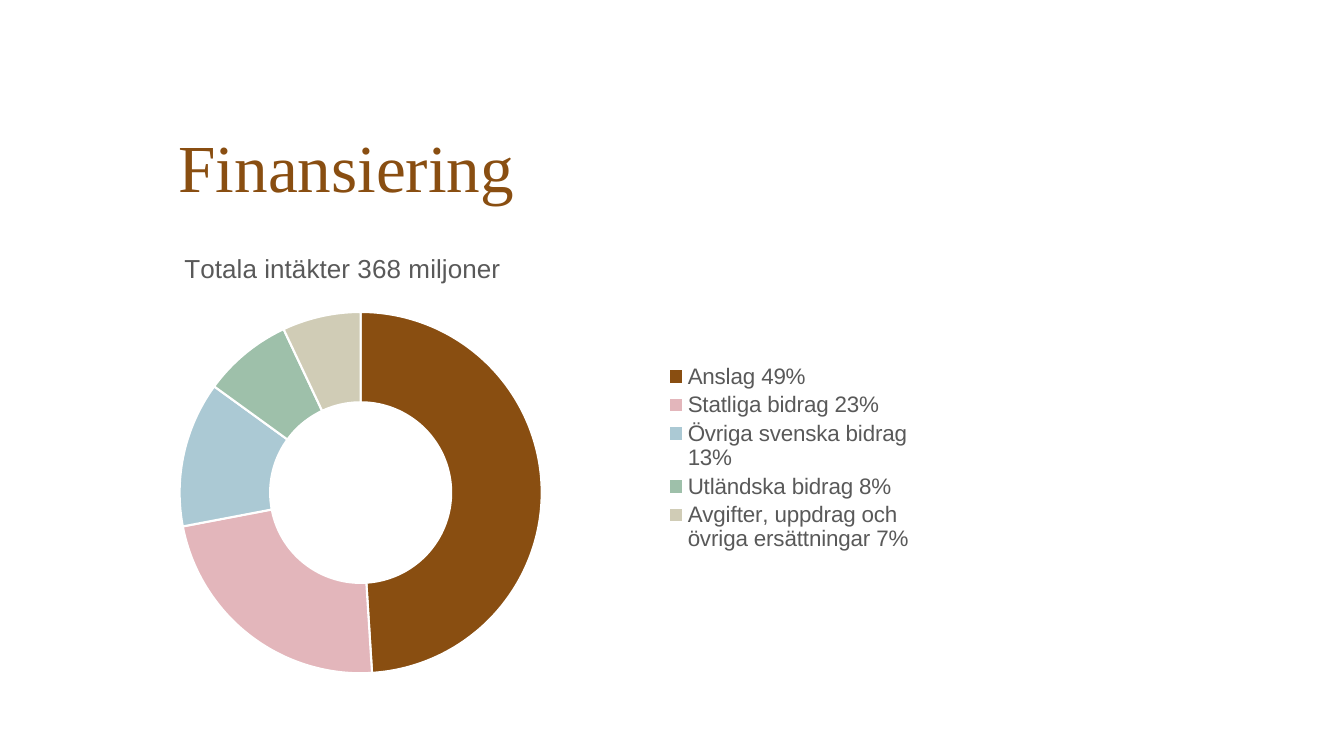
from dataclasses import dataclass

from lxml import etree
from pptx import Presentation
from pptx import util as u
from pptx.chart.data import CategoryChartData
from pptx.dml.color import RGBColor
from pptx.enum import chart as charts, text
from pptx.oxml import ns

SLIDE_WIDTH, SLIDE_HEIGHT = u.Inches(13.33), u.Inches(7.5)
COLORS = {
    "brown": "894E11",
    "pink": "E3B6BB",
    "blue": "ABC9D4",
    "green": "9EC0AA",
    "sand": "D0CCB6",
    "grey": "595959",
    "white": "FFFFFF",
}


@dataclass(frozen=True)
class Income:
    label: str
    percent: int
    color: str


@dataclass(frozen=True)
class Area:
    x: float
    y: float
    w: float = 0
    h: float = 0

    def on_slide(self) -> tuple[int, int, int, int]:
        return (
            int(self.x * SLIDE_WIDTH),
            int(self.y * SLIDE_HEIGHT),
            int(self.w * SLIDE_WIDTH),
            int(self.h * SLIDE_HEIGHT),
        )


INCOMES = [
    Income("Anslag 49%", 49, "brown"),
    Income("Statliga bidrag 23%", 23, "pink"),
    Income("Övriga svenska bidrag 13%", 13, "blue"),
    Income("Utländska bidrag 8%", 8, "green"),
    Income("Avgifter, uppdrag och \növriga ersättningar 7%", 7, "sand"),
]
HEADING = Area(1.77 / 13.33, 0.39 / 7.5, 9.65 / 13.33, 1.97 / 7.5)
FUNDING = Area(0.38 / 13.33, 2.36 / 7.5, 8.76 / 13.33, 4.33 / 7.5)
RING = Area(0.16, 0.17, 0.41, 0.83)
CAPTION = Area(0.16, 0.02)
KEY = Area(0.71, 0.28, 0.28, 0.45)


def rgb(name: str) -> RGBColor:
    return RGBColor.from_string(COLORS[name])


def set_font(font, name: str, size: float, color: str) -> None:
    font.name, font.size, font.bold = name, u.Pt(size), False
    font.color.rgb = rgb(color)


def place(part, area: Area, inner: bool = False) -> None:
    for old in part.findall(ns.qn("c:layout")):
        part.remove(old)
    layout = etree.Element(ns.qn("c:layout"))
    manual = etree.SubElement(layout, ns.qn("c:manualLayout"))
    settings = [("layoutTarget", "inner")] if inner else []
    settings += [("xMode", "edge"), ("yMode", "edge"), ("x", area.x), ("y", area.y)]
    if area.w:
        settings += [("w", area.w), ("h", area.h)]
    for tag, value in settings:
        etree.SubElement(manual, ns.qn(f"c:{tag}")).set("val", str(value))
    overlay = part.find(ns.qn("c:overlay"))
    if overlay is None:
        part.insert(0, layout)
    else:
        overlay.addprevious(layout)


def add_heading(slide) -> None:
    heading = slide.shapes.title
    heading.left, heading.top, heading.width, heading.height = HEADING.on_slide()
    frame = heading.text_frame
    frame.word_wrap = True
    frame.vertical_anchor = text.MSO_ANCHOR.BOTTOM
    frame.margin_left = frame.margin_top = frame.margin_right = 0
    frame.margin_bottom = u.Inches(0.31)
    paragraph = frame.paragraphs[0]
    paragraph.alignment = text.PP_ALIGN.LEFT
    paragraph.line_spacing = 0.9
    run = paragraph.add_run()
    run.text = "Finansiering"
    set_font(run.font, "Times New Roman", 48, "brown")


def add_funding(slide) -> None:
    data = CategoryChartData()
    data.categories = [income.label for income in INCOMES]
    data.add_series("Series 1", [income.percent for income in INCOMES])
    funding = slide.shapes.add_chart(
        charts.XL_CHART_TYPE.DOUGHNUT, *FUNDING.on_slide(), data
    ).chart
    set_font(funding.font, "Arial", 10, "grey")

    funding.has_title = True
    caption = funding.chart_title
    caption.include_in_layout = False
    run = caption.text_frame.paragraphs[0].add_run()
    run.text = "Totala intäkter 368 miljoner"
    set_font(run.font, "Arial", 18.6, "grey")
    place(caption._element, CAPTION)

    funding.has_legend = True
    key = funding.legend
    key.position = charts.XL_LEGEND_POSITION.RIGHT
    key.include_in_layout = False
    set_font(key.font, "Arial", 16, "grey")
    place(key._element, KEY)

    ring = funding.plots[0]
    ring.vary_by_categories = True
    ring._element.find(ns.qn("c:holeSize")).set("val", "49")
    place(ring._element.getparent(), RING, inner=True)
    for index, income in enumerate(INCOMES):
        style = ring.series[0].points[index].format
        style.fill.solid()
        style.fill.fore_color.rgb = rgb(income.color)
        style.line.color.rgb = rgb("white")
        style.line.width = u.Pt(1.5)


def main() -> None:
    deck = Presentation()
    deck.slide_width, deck.slide_height = SLIDE_WIDTH, SLIDE_HEIGHT
    slide = deck.slides.add_slide(deck.slide_layouts.get_by_name("Title Only"))
    add_heading(slide)
    add_funding(slide)
    deck.save("out.pptx")


if __name__ == "__main__":
    main()
